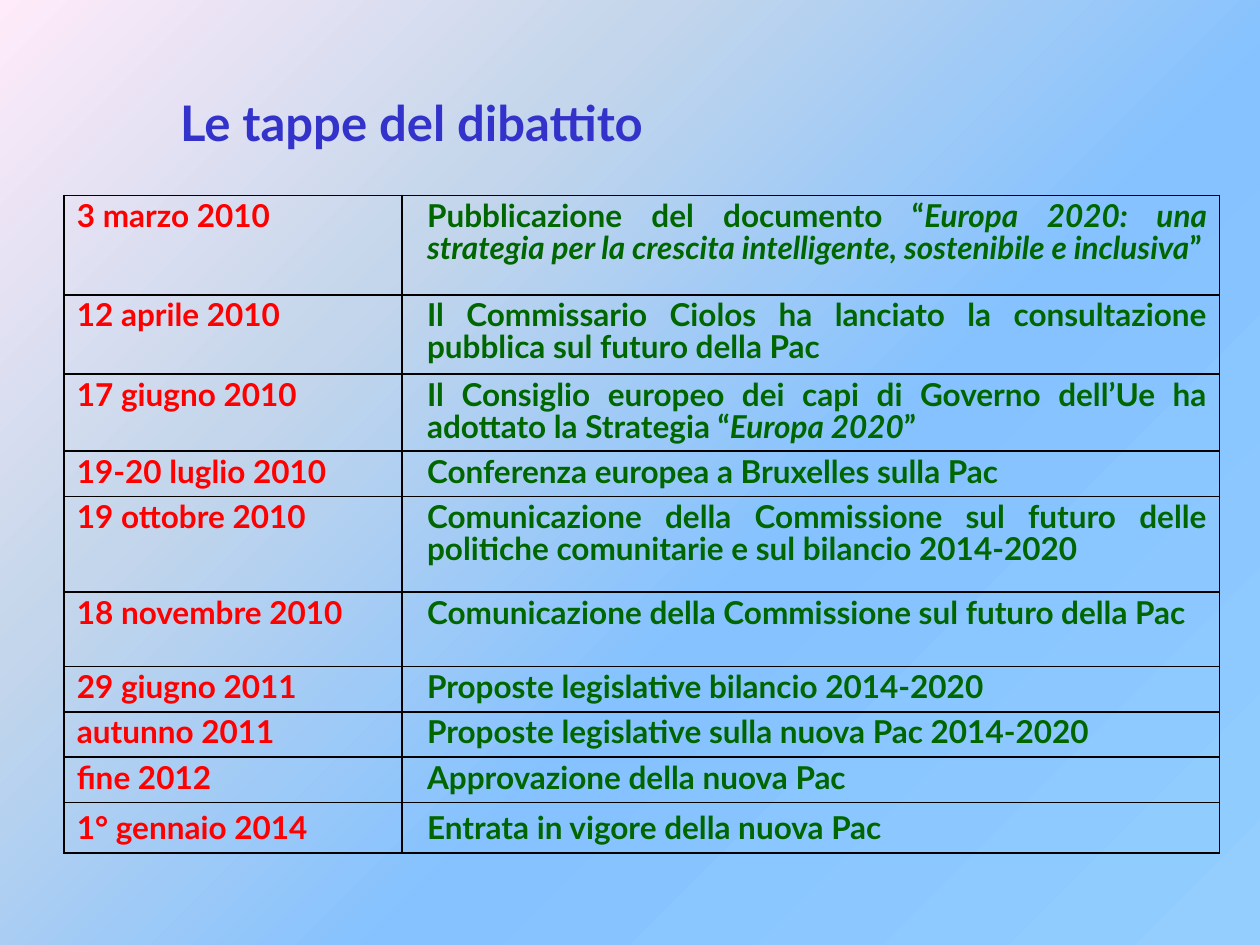
from dataclasses import dataclass

from lxml.etree import fromstring
from pptx import Presentation
from pptx.dml.color import RGBColor
from pptx.enum.text import MSO_ANCHOR as Anchor, PP_ALIGN as Align
from pptx.oxml import parse_xml
from pptx.oxml.ns import nsdecls
from pptx.util import Inches, Pt

TITLE = "Le tappe del dibattito"
STEPS = [
    ("3 marzo 2010", ["Pubblicazione del documento “",
                      "Europa 2020: una strategia per la crescita intelligente, "
                      "sostenibile e inclusiva", "”"], 0.79),
    ("12 aprile 2010", ["Il Commissario Ciolos ha lanciato la consultazione "
                        "pubblica sul futuro della Pac"], 0.63),
    ("17 giugno 2010", ["Il Consiglio europeo dei capi di Governo dell’Ue ha "
                        "adottato la Strategia “", "Europa 2020", "”"], 0.61),
    ("19-20 luglio 2010", ["Conferenza europea a Bruxelles sulla Pac"], 0.36),
    ("19 ottobre 2010", ["Comunicazione della Commissione sul futuro delle "
                         "politiche comunitarie e sul bilancio 2014-2020"], 0.76),
    ("18 novembre 2010", ["Comunicazione della Commissione sul futuro della Pac"], 0.59),
    ("29 giugno 2011", ["Proposte legislative bilancio 2014-2020"], 0.36),
    ("autunno 2011", ["Proposte legislative sulla nuova Pac 2014-2020"], 0.36),
    ("fine 2012", ["Approvazione della nuova Pac"], 0.36),
    ("1° gennaio 2014", ["Entrata in vigore della nuova Pac"], 0.4),
]
COLUMNS = (2.68, 6.49)


@dataclass(frozen=True)
class Theme:
    font: str = "Lato"
    title: str = "3333CC"
    date: str = "FF0000"
    event: str = "006600"
    border: str = "000000"
    title_size: int = 28
    text_size: int = 18
    backdrop: tuple = ((0, "93CEFF"), (40, "85C2FF"), (70, "C4D6EB"), (100, "FFEBFA"))


THEME = Theme()


def apply(target, values):
    for name, value in values.items():
        setattr(target, name, value)


def style_font(font, size, color, italic=False):
    apply(font, {"name": THEME.font, "size": Pt(size), "bold": True, "italic": italic})
    font.color.rgb = RGBColor.from_string(color)


def paint_background(slide):
    stops = "".join(f'<a:gs pos="{share * 1000}"><a:srgbClr val="{color}"/></a:gs>'
                    for share, color in THEME.backdrop)
    background = parse_xml(
        f'<p:bg {nsdecls("p", "a")}><p:bgPr><a:gradFill rotWithShape="0">'
        f'<a:gsLst>{stops}</a:gsLst><a:path path="circle">'
        '<a:fillToRect l="100000" t="100000"/></a:path></a:gradFill>'
        '<a:effectLst/></p:bgPr></p:bg>')
    slide.element.cSld.insert(0, background)


def add_borders(cell):
    properties = cell._tc.get_or_add_tcPr()
    for position, side in enumerate("LRTB"):
        properties.insert(position, fromstring(
            f'<a:ln{side} {nsdecls("a")} w="12700"><a:solidFill>'
            f'<a:srgbClr val="{THEME.border}"/></a:solidFill></a:ln{side}>'))


def fill_cell(cell, pieces, color, margin, indent, is_last):
    cell.fill.background()
    add_borders(cell)
    paragraph = cell.text_frame.paragraphs[0]
    properties = paragraph._p.get_or_add_pPr()
    properties.set("marL", str(Inches(margin)))
    properties.set("indent", str(Inches(indent)))
    apply(paragraph, {"alignment": Align.LEFT if is_last else Align.JUSTIFY,
                      "line_spacing": 1.0 if is_last else 0.85})
    for position, piece in enumerate(pieces):
        run = paragraph.add_run()
        run.text = piece
        style_font(run.font, THEME.text_size, color, italic=position % 2 == 1)


def add_title(slide):
    title = slide.shapes.title
    apply(title, {"left": Inches(1.33), "top": Inches(0.42),
                  "width": Inches(8.25), "height": Inches(0.83)})
    title.text_frame.text = TITLE
    title.text_frame.vertical_anchor = Anchor.BOTTOM
    paragraph = title.text_frame.paragraphs[0]
    apply(paragraph, {"alignment": Align.LEFT, "line_spacing": 0.8})
    style_font(paragraph.runs[0].font, THEME.title_size, THEME.title)


def add_timeline(slide):
    height = sum(step[2] for step in STEPS)
    table = slide.shapes.add_table(len(STEPS), len(COLUMNS), Inches(0.51), Inches(1.55),
                                   Inches(sum(COLUMNS)), Inches(height)).table
    apply(table, {"first_row": False, "horz_banding": False})
    for column, width in zip(table.columns, COLUMNS):
        column.width = Inches(width)
    for index, (date, event, row_height) in enumerate(STEPS):
        table.rows[index].height = Inches(row_height)
        is_last = index == len(STEPS) - 1
        fill_cell(table.cell(index, 0), [date], THEME.date, 0.38, -0.38, is_last)
        fill_cell(table.cell(index, 1), event, THEME.event, 0.1, 0, is_last)


def main():
    presentation = Presentation()
    apply(presentation, {"slide_width": Inches(10), "slide_height": Inches(7.5)})
    slide = presentation.slides.add_slide(presentation.slide_layouts[5])
    paint_background(slide)
    add_title(slide)
    add_timeline(slide)
    presentation.save("out.pptx")


if __name__ == "__main__":
    main()
